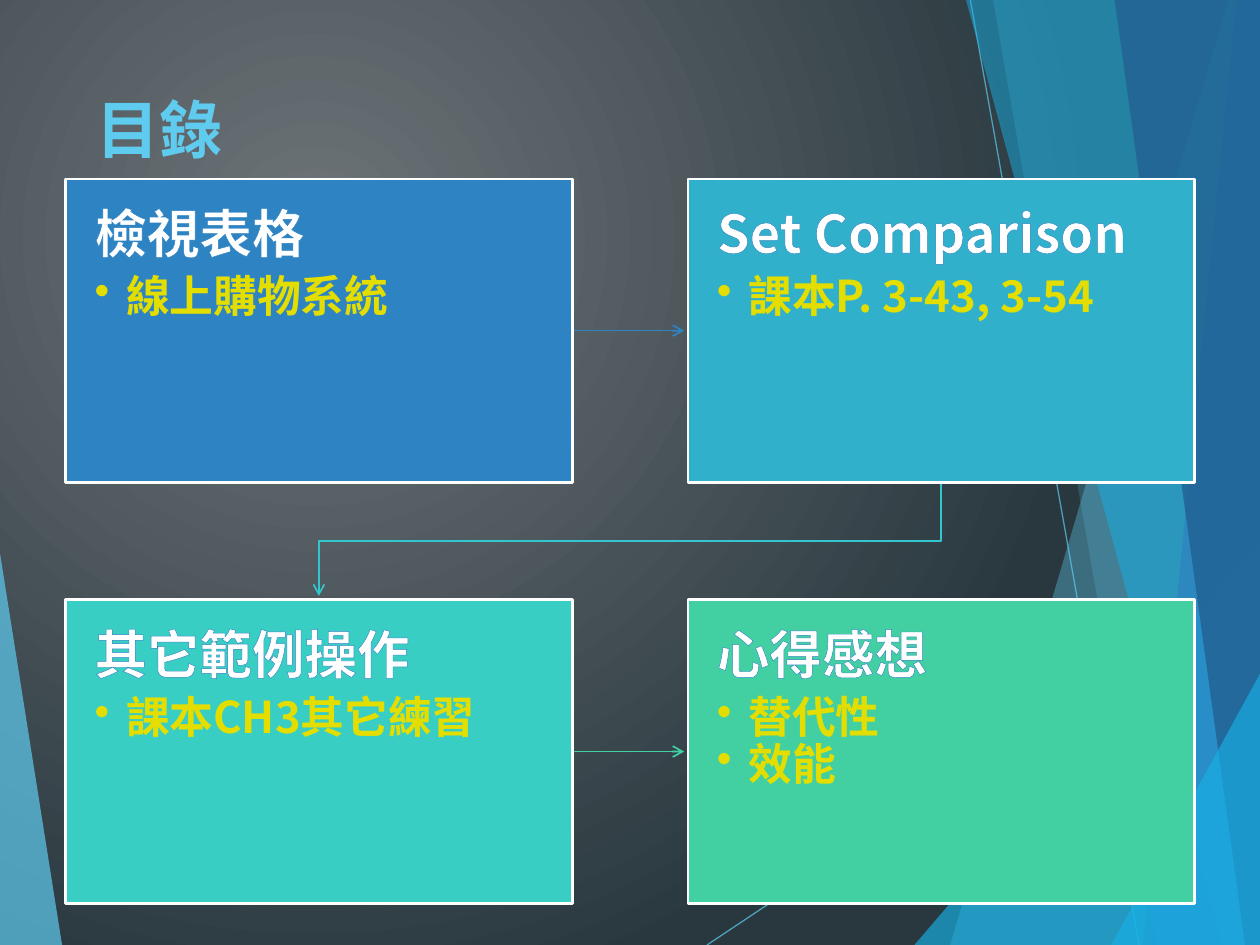
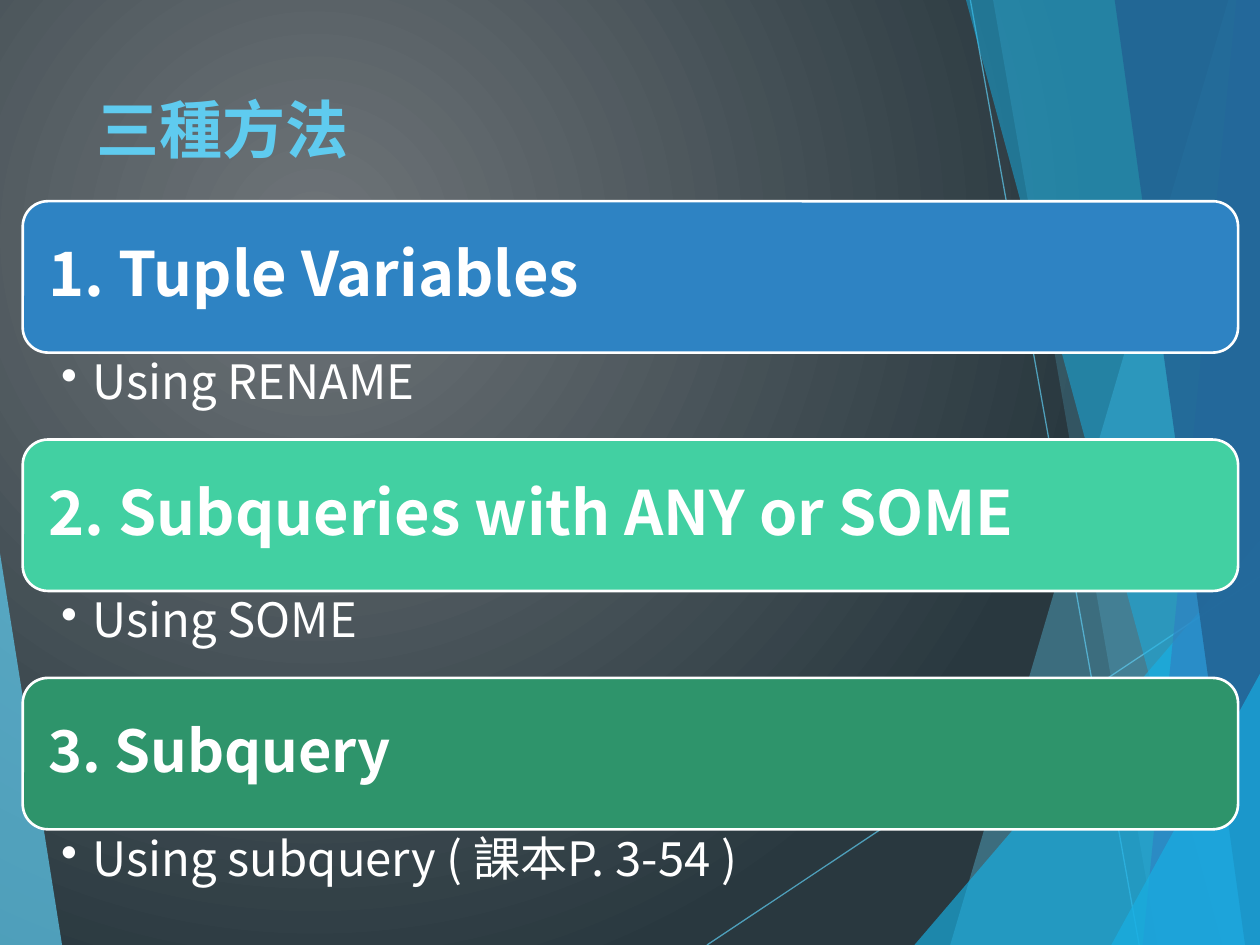
from dataclasses import dataclass
from typing import Any

from lxml import etree
from pptx import Presentation
from pptx.dml.color import RGBColor
from pptx.enum.shapes import MSO_CONNECTOR, MSO_SHAPE
from pptx.enum.text import MSO_ANCHOR, MSO_AUTO_SIZE
from pptx.oxml.ns import qn
from pptx.util import Pt

LINE = MSO_CONNECTOR.STRAIGHT
RECT = MSO_SHAPE.RECTANGLE
ROUND = MSO_SHAPE.ROUNDED_RECTANGLE
TOP = MSO_ANCHOR.TOP
MIDDLE = MSO_ANCHOR.MIDDLE
FIXED = MSO_AUTO_SIZE.NONE

WIDE, HIGH = 720, 540
FACE = "Noto Sans CJK SC"
HEX = {
    "glow": "6E7478",
    "night": "29383F",
    "sky": "5FCBEF",
    "azure": "17B0E4",
    "blue": "2E83C3",
    "navy": "226292",
    "cyan": "31B0CB",
    "link": "34C6CE",
    "teal": "39CEC4",
    "mint": "42D0A2",
    "green": "2E946B",
    "white": "FFFFFF",
    "yellow": "E3DE00",
}


@dataclass
class Band:
    x: float
    y: float
    foot: float
    edge: float
    hue: str
    alpha: int


@dataclass
class Ray:
    x1: float
    y1: float
    x2: float
    y2: float


@dataclass
class Box:
    x: float
    y: float
    w: float
    h: float


@dataclass
class Style:
    size: float
    hue: str
    bold: bool = True
    after: float = 0
    bullet: bool = False
    edge: str = ""
    spacing: float = 0.9


@dataclass
class Card:
    head: str
    items: list[str]
    hue: str


@dataclass
class Step:
    head: str
    note: str
    hue: str
    size: float


LEFT = Band(0, 316, 35.5, 0, "sky", 70)
RAYS = [Ray(404, 540, 720, 329.5), Ray(554.5, 0, 651, 540)]
RIGHT = [
    Band(702, 0, 543, WIDE, "sky", 36),
    Band(567.5, 0, 661.5, WIDE, "sky", 20),
    Band(WIDE, 309, 522.5, WIDE, "azure", 66),
    Band(552, 0, 698.5, WIDE, "azure", 50),
    Band(706.5, 0, 653, WIDE, "blue", 70),
    Band(637, 0, 711.5, WIDE, "navy", 82),
    Band(WIDE, 385, 635, WIDE, "azure", 66),
]
CARDS = [
    Card("檢視表格", ["線上購物系統"], "blue"),
    Card("Set Comparison", ["課本P. 3-43, 3-54"], "cyan"),
    Card("其它範例操作", ["課本CH3其它練習"], "teal"),
    Card("心得感想", ["替代性", "效能"], "mint"),
]
STEPS = [
    Step("1. Tuple Variables", "Using RENAME", "blue", 35),
    Step("2. Subqueries with ANY or SOME", "Using SOME", "mint", 35),
    Step("3. Subquery", "Using subquery ( 課本P. 3-54 )", "green", 33),
]
TITLE = Style(36, "sky", spacing=1.0)
HEAD = Style(30, "white", after=6, edge="blue")
ITEM = Style(25, "yellow", bullet=True)
NOTE = Style(27, "white", bold=False, bullet=True)


def rgb(hue: str) -> RGBColor:
    return RGBColor.from_string(HEX[hue])


def put(target: Any, values: dict) -> None:
    for name, value in values.items():
        setattr(target, name, value)


def fade(shape: Any, alpha: int) -> None:
    for tint in shape.element.spPr.iter(qn("a:srgbClr")):
        etree.SubElement(tint, qn("a:alpha"), val=str(alpha * 1000))


def path(slide: Any, points: list, close: bool) -> Any:
    spots = [(Pt(x), Pt(y)) for x, y in points]
    pen = slide.shapes.build_freeform(*spots[0])
    pen.add_line_segments(spots[1:], close=close)
    shape = pen.convert_to_shape()
    shape.shadow.inherit = False
    return shape


def stroke(shape: Any, hue: str, width: float) -> None:
    shape.line.color.rgb = rgb(hue)
    shape.line.width = Pt(width)


def rule(slide: Any, ray: Ray, hue: str, width: float) -> Any:
    ends = [Pt(v) for v in (ray.x1, ray.y1, ray.x2, ray.y2)]
    shape = slide.shapes.add_connector(LINE, *ends)
    stroke(shape, hue, width)
    etree.SubElement(shape.element.spPr, qn("a:effectLst"))
    return shape


def arrow(shape: Any) -> None:
    line = shape.element.spPr.find(qn("a:ln"))
    etree.SubElement(line, qn("a:tailEnd"), type="arrow")


def wedge(slide: Any, band: Band) -> None:
    points = [(band.x, band.y), (band.foot, HIGH), (band.edge, HIGH)]
    if band.x != band.edge:
        points.append((band.edge, band.y))
    shape = path(slide, points, True)
    shape.fill.solid()
    shape.fill.fore_color.rgb = rgb(band.hue)
    shape.line.fill.background()
    fade(shape, band.alpha)


def write(shape: Any, texts: list[tuple[str, Style]], pads: tuple,
          anchor: Any = TOP) -> None:
    frame = shape.text_frame
    sides = ("margin_left", "margin_top", "margin_right", "margin_bottom")
    put(frame, {"word_wrap": True, "auto_size": FIXED,
                "vertical_anchor": anchor})
    put(frame, {side: Pt(pad) for side, pad in zip(sides, pads)})
    for i, (text, style) in enumerate(texts):
        para = frame.add_paragraph() if i else frame.paragraphs[0]
        put(para, {"line_spacing": style.spacing, "space_before": Pt(0),
                   "space_after": Pt(style.after)})
        props = para._p.get_or_add_pPr()
        props.set("algn", "l")
        if style.bullet:
            props.set("marL", str(Pt(18)))
            props.set("indent", str(-Pt(18)))
            etree.SubElement(props, qn("a:buChar"), char="•")
        run = para.add_run()
        run.text = text
        put(run.font, {"name": FACE, "size": Pt(style.size),
                       "bold": style.bold})
        run.font.color.rgb = rgb(style.hue)
        look = run._r.get_or_add_rPr()
        etree.SubElement(look, qn("a:ea"), typeface=FACE)
        if style.edge:
            line = etree.Element(qn("a:ln"), w=str(Pt(0.52)))
            fill = etree.SubElement(line, qn("a:solidFill"))
            etree.SubElement(fill, qn("a:srgbClr"), val=HEX[style.edge])
            look.insert(0, line)


def area(box: Box) -> list:
    return [Pt(v) for v in (box.x, box.y, box.w, box.h)]


def panel(slide: Any, kind: Any, box: Box, hue: str) -> Any:
    shape = slide.shapes.add_shape(kind, *area(box))
    shape.shadow.inherit = False
    shape.fill.solid()
    shape.fill.fore_color.rgb = rgb(hue)
    stroke(shape, "white", 1.5)
    return shape


def label(slide: Any, box: Box, text: str, style: Style, pads: tuple) -> None:
    write(slide.shapes.add_textbox(*area(box)), [(text, style)], pads)


def start(deck: Any, title: str) -> Any:
    slide = deck.slides.add_slide(deck.slide_layouts[6])
    fill = slide.background.fill
    fill.gradient()
    for stop, hue, spot in zip(fill.gradient_stops, ("glow", "night"), (0, 1)):
        stop.color.rgb = rgb(hue)
        stop.position = spot
    grad = next(slide.element.iter(qn("a:gradFill")))
    grad.remove(grad.find(qn("a:lin")))
    round_ = etree.SubElement(grad, qn("a:path"), path="circle")
    etree.SubElement(round_, qn("a:fillToRect"), l="50000", t="50000",
                     r="100000", b="100000")
    wedge(slide, LEFT)
    for ray in RAYS:
        fade(rule(slide, ray, "sky", 0.75), 70)
    for band in RIGHT:
        wedge(slide, band)
    label(slide, Box(48, 48, 500, 104), title, TITLE, (7.2, 3.6, 7.2, 3.6))
    return slide


def agenda(deck: Any) -> None:
    slide = start(deck, "目錄")
    x, y, w, h = 37.5, 102.2, 289.5, 173.5
    across, down, gap = 355.7, 240.5, 2.2
    for row, hue in enumerate(("blue", "mint")):
        mid = y + row * down + h / 2
        arrow(rule(slide, Ray(x + w, mid, x + across - gap, mid), hue, 1))
    left, right, turn = x + w / 2, x + across + w / 2, y + (h + down) / 2
    bend = path(slide, [(right, y + h), (right, turn), (left, turn),
                        (left, y + down - gap)], False)
    bend.fill.background()
    stroke(bend, "link", 1)
    arrow(bend)
    for i, card in enumerate(CARDS):
        row, col = divmod(i, 2)
        box = Box(x + col * across, y + row * down, w, h)
        texts = [(card.head, HEAD)] + [(item, ITEM) for item in card.items]
        write(panel(slide, RECT, box, card.hue), texts, (16.5,) * 4)


def methods(deck: Any) -> None:
    slide = start(deck, "三種方法")
    x, y, w, h, pitch = 13, 115, 694.5, 86.5, 136.2
    for i, step in enumerate(STEPS):
        top = y + i * pitch
        bar = panel(slide, ROUND, Box(x, top, w, h), step.hue)
        style = Style(step.size, "white", after=6)
        write(bar, [(step.head, style)], (10.5,) * 4, MIDDLE)
        label(slide, Box(x, top + h, w, pitch - h), step.note, NOTE,
              (22, 3.5, 19, 3.5))


def main() -> None:
    deck = Presentation()
    put(deck, {"slide_width": Pt(WIDE), "slide_height": Pt(HIGH)})
    agenda(deck)
    methods(deck)
    deck.save("out.pptx")


if __name__ == "__main__":
    main()
